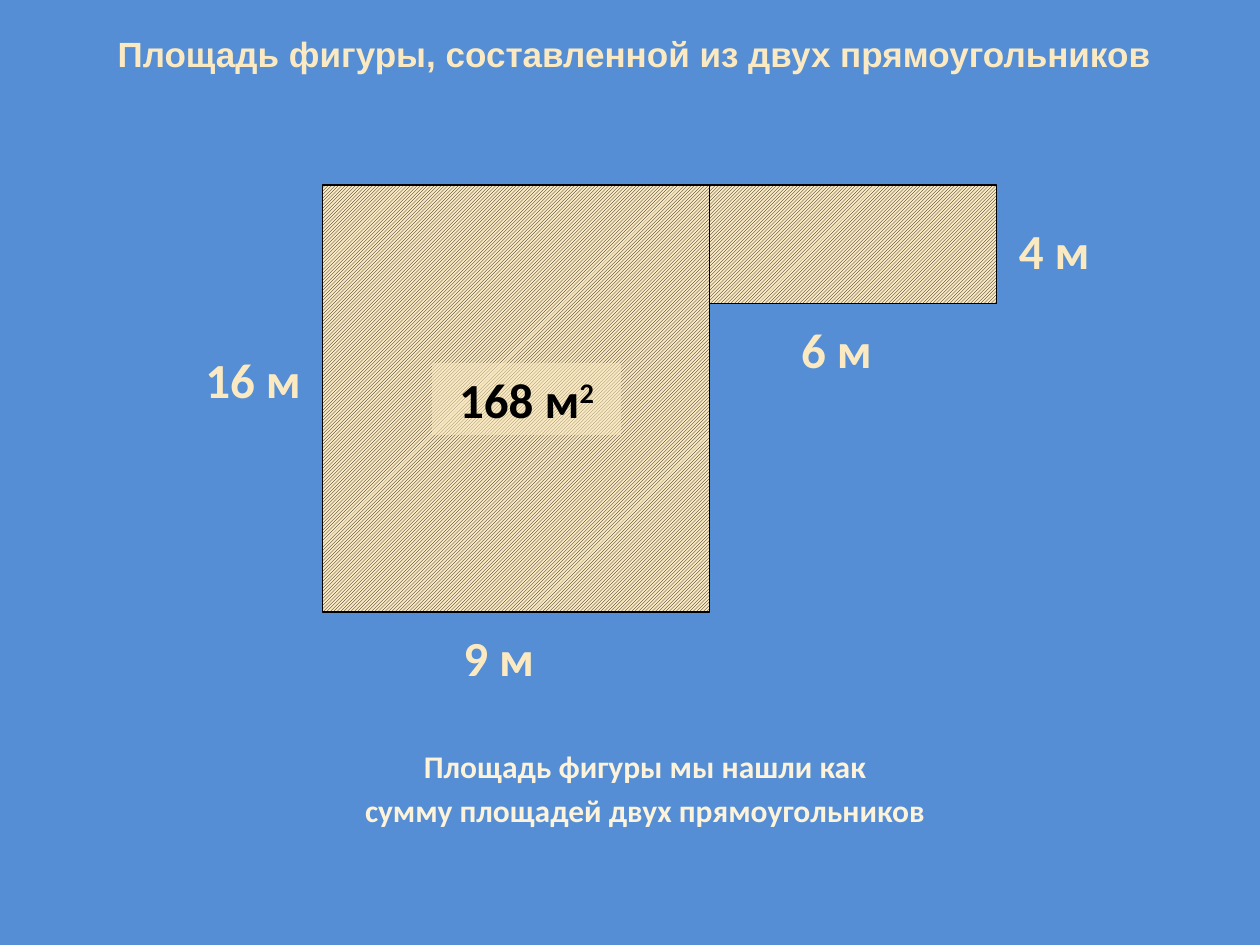
"""Build a slide on the area of a figure made of two rectangles."""
from lxml import etree
from pptx import Presentation
from pptx.dml.color import RGBColor
from pptx.enum.dml import MSO_PATTERN
from pptx.enum.shapes import MSO_SHAPE
from pptx.enum.text import MSO_ANCHOR, MSO_AUTO_SIZE, PP_ALIGN
from pptx.oxml.ns import qn
from pptx.util import Cm, Pt

RECT = MSO_SHAPE.RECTANGLE
HATCH = MSO_PATTERN.LIGHT_UPWARD_DIAGONAL
TOP = MSO_ANCHOR.TOP
GROW = MSO_AUTO_SIZE.SHAPE_TO_FIT_TEXT
LEFT, MID = PP_ALIGN.LEFT, PP_ALIGN.CENTER

THEME = {
    "back": RGBColor.from_string("558ED5"),
    "cream": RGBColor.from_string("FBEAC1"),
    "pale": RGBColor.from_string("FDF3DB"),
    "black": RGBColor.from_string("000000"),
    "body": "Calibri",
    "head": "Arial",
    "big": Pt(28),
    "small": Pt(18),
    "title": Pt(20),
    "line": Pt(0.75),
}


def write(shape, lines, size, color, face="body", align=MID, gap=0):
    frame = shape.text_frame
    form = {"word_wrap": True, "auto_size": GROW, "vertical_anchor": TOP}
    for name, value in form.items():
        setattr(frame, name, value)
    look = {"name": THEME[face], "size": THEME[size], "bold": True}
    for i, line in enumerate(lines):
        para = frame.add_paragraph() if i else frame.paragraphs[0]
        para.alignment = align
        para.space_before = Pt(gap)
        for j, part in enumerate(line.split("^")):
            run = para.add_run()
            run.text = part
            for name, value in look.items():
                setattr(run.font, name, value)
            run.font.color.rgb = THEME[color]
            if j:
                run._r.get_or_add_rPr().set("baseline", "30000")


deck = Presentation()
deck.slide_width, deck.slide_height = Cm(25.4), Cm(19.05)
slide = deck.slides.add_slide(deck.slide_layouts[5])
slide.background.fill.solid()
slide.background.fill.fore_color.rgb = THEME["back"]
shapes = slide.shapes

title = shapes.title
place = {"left": 1.09, "top": 0.53, "width": 23.39, "height": 1.09}
for name, value in place.items():
    setattr(title, name, Cm(value))
write(title, ["Площадь фигуры, составленной из двух прямоугольников"],
      "title", "cream", "head")

x, y, wide = 6.5, 3.73, 7.8
for left, width, height in [(x + wide, 5.79, 2.39), (x, wide, 8.61)]:
    part = shapes.add_shape(RECT, Cm(left), Cm(y), Cm(width), Cm(height))
    part.shadow.inherit = False
    part.fill.patterned()
    part.fill.pattern = HATCH
    part.fill.fore_color.rgb = THEME["black"]
    part.fill.back_color.rgb = THEME["cream"]
    part.line.color.rgb = THEME["black"]
    part.line.width = THEME["line"]

sides = [
    ("16 м", 3.89, 6.93, 3),
    ("9 м", 9.09, 12.52, 3),
    ("4 м", 20.29, 4.32, 2.39),
    ("6 м", 15.9, 6.32, 2.59),
]
for text, left, top, width in sides:
    box = shapes.add_textbox(Cm(left), Cm(top), Cm(width), Cm(1.45))
    write(box, [text], "big", "cream", align=LEFT)

area = shapes.add_shape(RECT, Cm(8.71), Cm(7.32), Cm(3.81), Cm(1.45))
area.shadow.inherit = False
area.fill.solid()
area.fill.fore_color.rgb = THEME["cream"]
tint = area._element.spPr.find(qn("a:solidFill")).find(qn("a:srgbClr"))
etree.SubElement(tint, qn("a:alpha")).set("val", "52000")
area.line.fill.background()
write(area, ["168 м^2"], "big", "black")

note = shapes.add_textbox(Cm(4.9), Cm(14.94), Cm(16.21), Cm(2.49))
write(note, ["Площадь фигуры мы нашли как", "сумму площадей двух прямоугольников"],
      "small", "pale", gap=3.6)

deck.save("out.pptx")
